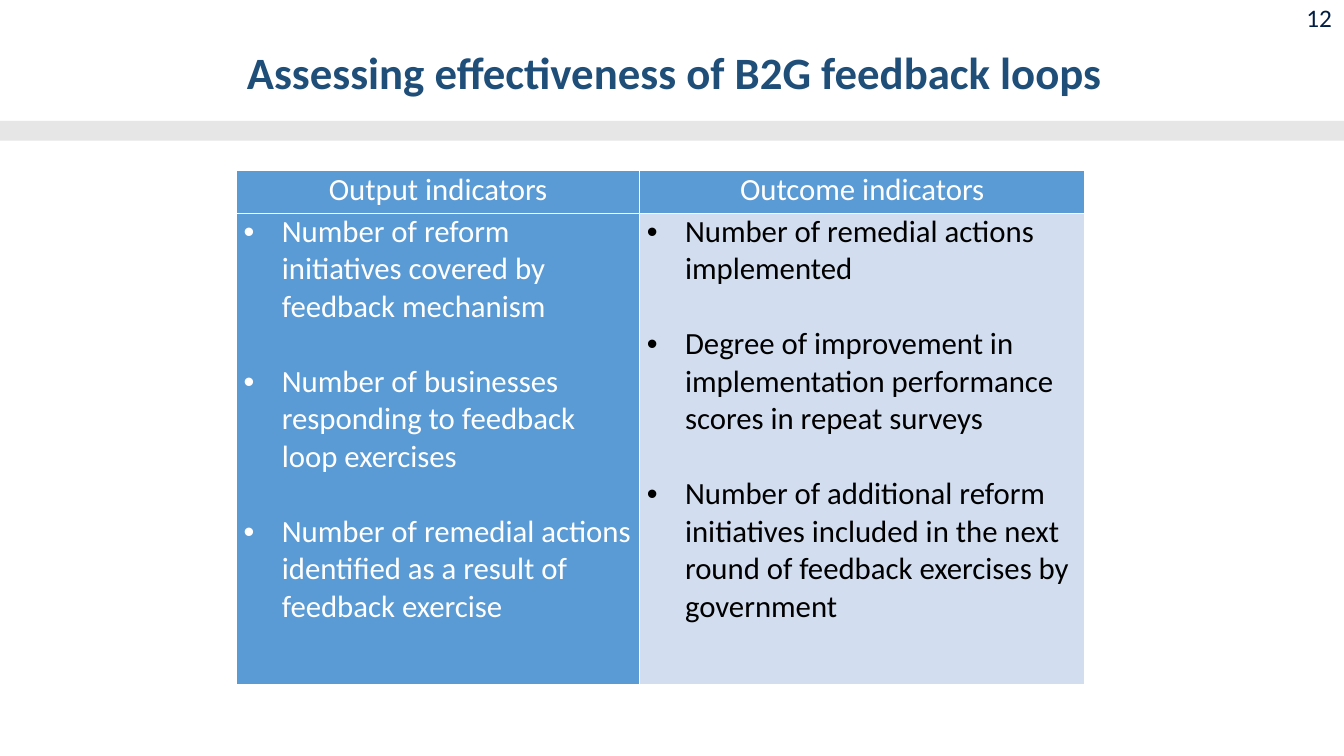
from lxml import etree
from pptx import Presentation
from pptx import util as u
from pptx.dml.color import RGBColor
from pptx.enum import shapes, text
from pptx.oxml import ns

WHITE = RGBColor(0xFF, 0xFF, 0xFF)
BLACK = RGBColor(0, 0, 0)
GREY = RGBColor(0xE7, 0xE6, 0xE6)
NAVY = RGBColor(0x02, 0x1F, 0x43)
DEEP = RGBColor(0x1F, 0x4E, 0x79)
BLUE = RGBColor(0x5B, 0x9B, 0xD5)
PALE = RGBColor(0xD2, 0xDE, 0xEF)

HEADS = ["Output indicators", "Outcome indicators"]
LISTS = [
    ["Number of reform initiatives covered by feedback mechanism",
     "Number of businesses responding to feedback loop exercises",
     "Number of remedial actions identified as a result of feedback exercise"],
    ["Number of remedial actions implemented",
     "Degree of improvement in implementation performance scores in repeat surveys",
     "Number of additional reform initiatives included in the next round of "
     "feedback exercises by government"],
]


def sub(parent, tag, **attrs):
    return etree.SubElement(parent, ns.qn(tag), attrs)


class Deck:
    """One slide, measured in hundredths of its width and height."""
    face = "Calibri"
    size = 22
    gap = 26.8
    indent = u.Inches(0.38)
    inset = u.Inches(0.07)

    def __init__(self):
        self.prs = Presentation()
        self.prs.slide_width = u.Inches(13.33)
        self.prs.slide_height = u.Inches(7.5)
        self.slide = self.prs.slides.add_slide(self.prs.slide_layouts[6])

    def col(self, n):
        return round(self.prs.slide_width * n / 100)

    def row(self, n):
        return round(self.prs.slide_height * n / 100)

    def area(self, x, y, w, h):
        return self.col(x), self.row(y), self.col(w), self.row(h)

    def font(self, para, size, color, bold=False):
        font = para.font
        font.name, font.size, font.bold = self.face, u.Pt(size), bold
        font.color.rgb = color

    def band(self, area, color):
        bar = self.slide.shapes.add_shape(shapes.MSO_SHAPE.RECTANGLE, *self.area(*area))
        bar.shadow.inherit = False
        bar.fill.solid()
        bar.fill.fore_color.rgb = color
        bar.line.fill.background()

    def label(self, area, words, size, color, align, bold=False, lead=1.0):
        frame = self.slide.shapes.add_textbox(*self.area(*area)).text_frame
        frame.word_wrap = True
        frame.vertical_anchor = text.MSO_ANCHOR.MIDDLE
        para = frame.paragraphs[0]
        para.text, para.alignment, para.line_spacing = words, align, lead
        self.font(para, size, color, bold)

    def table(self, x, y, cols, rows):
        grid = self.slide.shapes.add_table(
            len(rows), len(cols), *self.area(x, y, sum(cols), sum(rows))).table
        for item, n in zip(grid.columns, cols):
            item.width = self.col(n)
        for item, n in zip(grid.rows, rows):
            item.height = self.row(n)
        return grid

    def cell(self, cell, lines, fill, color, listed=False):
        cell.margin_left = cell.margin_right = self.inset
        cell.margin_top = cell.margin_bottom = 0
        self.edge(cell)
        cell.fill.solid()
        cell.fill.fore_color.rgb = fill
        cell.text = "\n".join(lines)
        for i, para in enumerate(cell.text_frame.paragraphs):
            self.font(para, self.size, color)
            if listed:
                para.space_before = u.Pt(self.gap if i else 0)
                self.bullet(para)
            else:
                para.alignment = text.PP_ALIGN.CENTER

    def edge(self, cell):
        props = cell._tc.get_or_add_tcPr()
        for side in "LRTB":
            line = sub(props, f"a:ln{side}", w=str(u.Pt(1)))
            sub(sub(line, "a:solidFill"), "a:srgbClr", val=str(WHITE))

    def bullet(self, para):
        props = para._p.get_or_add_pPr()
        props.set("marL", str(self.indent))
        props.set("indent", str(-self.indent))
        mark = etree.Element(ns.qn("a:buFont"), typeface="Arial")
        props.find(ns.qn("a:defRPr")).addprevious(mark)
        mark.addnext(etree.Element(ns.qn("a:buChar"), char="•"))


def main():
    deck = Deck()
    deck.band((0, 16, 100, 2.6), GREY)
    deck.label((96.4, -0.3, 3.45, 5.3), "12", 18, NAVY, text.PP_ALIGN.RIGHT)
    deck.label((3.9, 4.4, 92.6, 11), "Assessing effectiveness of B2G feedback loops",
               32, DEEP, text.PP_ALIGN.CENTER, bold=True, lead=0.9)
    grid = deck.table(17.6, 22.6, (30, 33.1), (5.6, 62.4))
    looks = [(BLUE, WHITE), (PALE, BLACK)]
    for i, (head, lines, look) in enumerate(zip(HEADS, LISTS, looks)):
        deck.cell(grid.cell(0, i), [head], BLUE, WHITE)
        deck.cell(grid.cell(1, i), lines, *look, listed=True)
    deck.prs.save("out.pptx")


if __name__ == "__main__":
    main()
